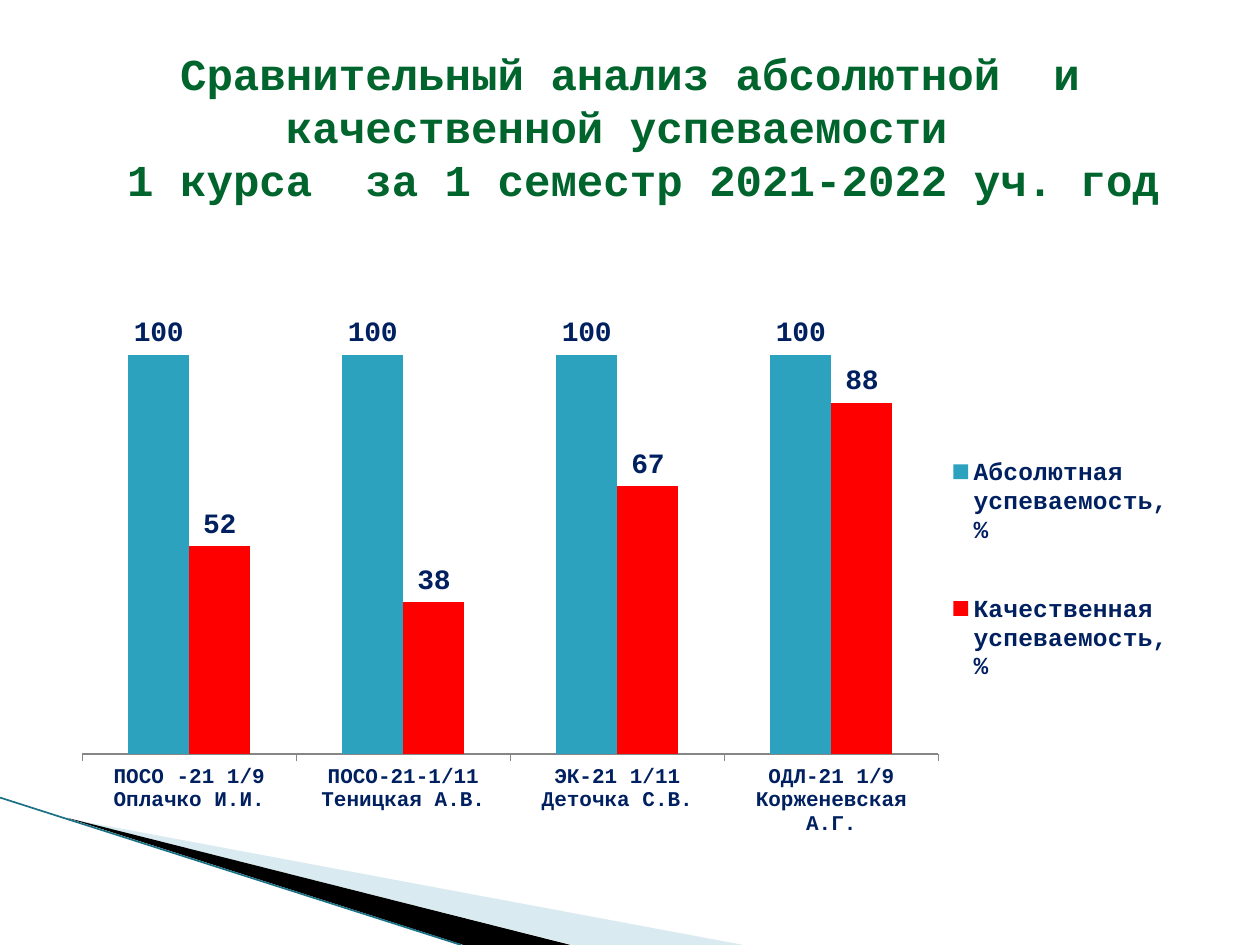
from lxml.etree import SubElement as Sub
from pptx import Presentation
from pptx.chart.data import CategoryChartData as Data
from pptx.dml.color import RGBColor
from pptx.enum.chart import XL_CHART_TYPE as Kind, XL_LABEL_POSITION as Spot
from pptx.enum.chart import XL_LEGEND_POSITION as Side, XL_TICK_LABEL_POSITION as Tick
from pptx.enum.chart import XL_TICK_MARK as Mark
from pptx.enum.shapes import MSO_CONNECTOR as Conn
from pptx.enum.text import MSO_ANCHOR as Anchor, PP_ALIGN as Align
from pptx.oxml import parse_xml
from pptx.oxml.ns import nsdecls, qn
from pptx.util import Inches, Pt

GREEN = RGBColor(0x00, 0x64, 0x2D)
NAVY = RGBColor(0x00, 0x20, 0x60)
TEAL = RGBColor(0x2D, 0xA2, 0xBF)
RED = RGBColor(0xFF, 0x00, 0x00)
PALE = RGBColor(0xA0, 0xCB, 0xDC)
DEEP = RGBColor(0x1A, 0x70, 0x84)
GRAY = RGBColor(0x86, 0x86, 0x86)
BLACK = RGBColor(0x00, 0x00, 0x00)
FACE = "Courier New"


def style(font, size, color):
    font.name = FACE
    font.size = Pt(size)
    font.bold = True
    font.color.rgb = color


def place(part, index, target, x, y, w, h):
    for old in part.findall(qn("c:layout")):
        part.remove(old)
    part.insert(index, parse_xml(
        f'<c:layout {nsdecls("c")}><c:manualLayout>{target}'
        f'<c:xMode val="edge"/><c:yMode val="edge"/><c:x val="{x}"/><c:y val="{y}"/>'
        f'<c:w val="{w}"/><c:h val="{h}"/></c:manualLayout></c:layout>'))


deck = Presentation()
deck.slide_width = Inches(10)
deck.slide_height = Inches(7.5)
slide = deck.slides.add_slide(deck.slide_layouts[6])
shapes = slide.shapes

wedges = [
    (PALE, 40, [(0.55, 6.5), (5.9, 7.5), (4.55, 7.5)]),
    (BLACK, 100, [(0.53, 6.49), (4.53, 7.5), (3.68, 7.5)]),
]
for color, alpha, points in wedges:
    spots = [(Inches(x), Inches(y)) for x, y in points]
    path = shapes.build_freeform(*spots[0])
    path.add_line_segments(spots[1:])
    wedge = path.convert_to_shape()
    wedge.shadow.inherit = False
    wedge.fill.solid()
    wedge.fill.fore_color.rgb = color
    wedge.line.fill.background()
    if alpha < 100:
        tone = wedge.fill._xPr.find(".//" + qn("a:srgbClr"))
        Sub(tone, qn("a:alpha"), val=str(alpha * 1000))

edge = shapes.add_connector(
    Conn.STRAIGHT, Inches(0), Inches(6.33), Inches(3.66), Inches(7.5))
edge.line.color.rgb = DEEP
edge.line.width = Pt(0.95)
Sub(edge._element.spPr, qn("a:effectLst"))

title = shapes.add_textbox(Inches(0.5), Inches(0.3), Inches(9), Inches(1.4))
frame = title.text_frame
frame.word_wrap = True
frame.vertical_anchor = Anchor.MIDDLE
frame.text = ("Сравнительный анализ абсолютной  и качественной успеваемости \v"
              " 1 курса  за 1 семестр 2021-2022 уч. год")
para = frame.paragraphs[0]
para.alignment = Align.CENTER
para.line_spacing = 1.0
style(para.font, 25.2, GREEN)
for run in para.runs:
    style(run.font, 25.2, GREEN)

data = Data()
data.categories = [
    "ПОСО -21 1/9\nОплачко И.И.",
    "ПОСО-21-1/11\nТеницкая А.В.",
    "ЭК-21 1/11\nДеточка С.В.",
    "ОДЛ-21 1/9\nКорженевская А.Г.",
]
data.add_series("Абсолютная успеваемость, %", [100, 100, 100, 100])
data.add_series("Качественная успеваемость, %", [52, 38, 67, 88])
chart = shapes.add_chart(
    Kind.COLUMN_CLUSTERED, Inches(0.5), Inches(2.02), Inches(9), Inches(5.35), data).chart
chart.has_title = False
chart.font.name = FACE
chart.font.size = Pt(10)
chart.font.color.rgb = BLACK

axis = chart.value_axis
axis.minimum_scale = 0
axis.maximum_scale = 120
axis.has_major_gridlines = False
axis.visible = False

axis = chart.category_axis
axis.major_tick_mark = Mark.OUTSIDE
axis.tick_label_position = Tick.NEXT_TO_AXIS
axis.format.line.color.rgb = GRAY
style(axis.tick_labels.font, 12, NAVY)

chart.has_legend = True
legend = chart.legend
legend.position = Side.RIGHT
legend.include_in_layout = False
style(legend.font, 14, NAVY)

plot = chart.plots[0]
plot.gap_width = 150
plot.overlap = 0
plot.vary_by_categories = False
for bars, color in zip(plot.series, (TEAL, RED)):
    bars.format.fill.solid()
    bars.format.fill.fore_color.rgb = color
    labels = bars.data_labels
    labels.show_value = True
    labels.position = Spot.OUTSIDE_END
    style(labels.font, 16, NAVY)

area = chart._chartSpace.chart.plotArea
place(area, 0, '<c:layoutTarget val="inner"/>', 0.017, 0.03, 0.755, 0.711)
place(legend._element, 1, "", 0.78, 0.23, 0.2, 0.48)

deck.save("out.pptx")
